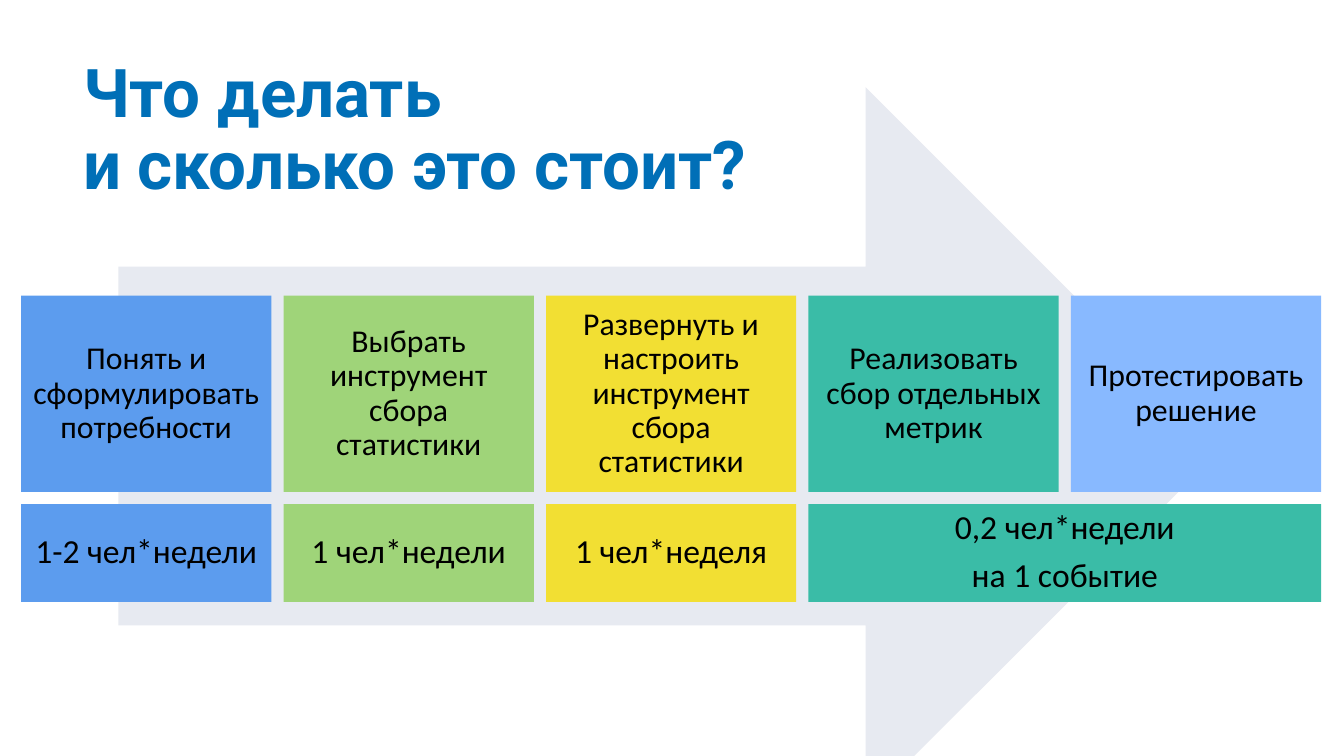
from pptx import Presentation
from pptx.dml.color import RGBColor
from pptx.enum.shapes import MSO_SHAPE
from pptx.enum.text import MSO_ANCHOR, PP_ALIGN
from pptx.util import Cm, Pt

HUES = {
    "arrow": "E7EAF1", "title": "006FB7", "text": "000000",
    "blue": "5C9CEE", "green": "9FD479", "yellow": "F2DF33",
    "teal": "3ABCA7", "sky": "88B9FF",
}
TITLE = "Что делать\vи сколько это стоит?"
STEPS = [
    ("Понять и сформулировать потребности", "blue", 1),
    ("Выбрать инструмент сбора статистики", "green", 1),
    ("Развернуть и настроить инструмент сбора статистики", "yellow", 1),
    ("Реализовать сбор отдельных метрик", "teal", 1),
    ("Протестировать решение", "sky", 1),
]
COSTS = [
    ("1-2 чел*недели", "blue", 1),
    ("1 чел*недели", "green", 1),
    ("1 чел*неделя", "yellow", 1),
    ("0,2 чел*недели\nна 1 событие", "teal", 2),
]
ROWS = [(STEPS, 5.59, 3.71, 17), (COSTS, 9.53, 1.85, 18)]
LEFT, WIDTH, PITCH = 0.4, 4.73, 4.96


def color(name):
    return RGBColor.from_string(HUES[name])


def write(shape, text, size, font="Calibri", hue="text", bold=False,
          align=PP_ALIGN.CENTER, anchor=MSO_ANCHOR.MIDDLE, inset=0.18, after=0):
    frame = shape.text_frame
    frame.word_wrap = True
    frame.vertical_anchor = anchor
    frame.margin_left = frame.margin_right = Cm(inset)
    frame.margin_top = frame.margin_bottom = Cm(min(inset, 0.18))
    frame.text = text
    for para in frame.paragraphs:
        para.alignment = align
        para.line_spacing = 0.9
        para.space_after = Pt(after)
        para.font.size = Pt(size)
        para.font.name = font
        para.font.bold = bold
        para.font.color.rgb = color(hue)


def block(slide, kind, hue, *box):
    shape = slide.shapes.add_shape(kind, *map(Cm, box))
    shape.shadow.inherit = False
    shape.fill.solid()
    shape.fill.fore_color.rgb = color(hue)
    shape.line.fill.background()
    return shape


def main():
    deck = Presentation()
    deck.slide_width, deck.slide_height = Cm(25.4), Cm(14.29)
    slide = deck.slides.add_slide(deck.slide_layouts[6])

    block(slide, MSO_SHAPE.RIGHT_ARROW, "arrow", 2.24, 1.65, 20.9, 13.56)
    title = slide.shapes.add_textbox(Cm(1.32), Cm(0.64), Cm(18.31), Cm(3.4))
    write(title, TITLE, 36, font="Roboto", hue="title", bold=True,
          align=PP_ALIGN.LEFT, anchor=MSO_ANCHOR.BOTTOM, inset=0.25)

    for cells, top, height, size in ROWS:
        for col, (text, hue, span) in enumerate(cells):
            width = WIDTH + (span - 1) * PITCH
            cell = block(slide, MSO_SHAPE.RECTANGLE, hue,
                         LEFT + col * PITCH, top, width, height)
            write(cell, text, size, after=size * 0.35)

    deck.save("out.pptx")


if __name__ == "__main__":
    main()
